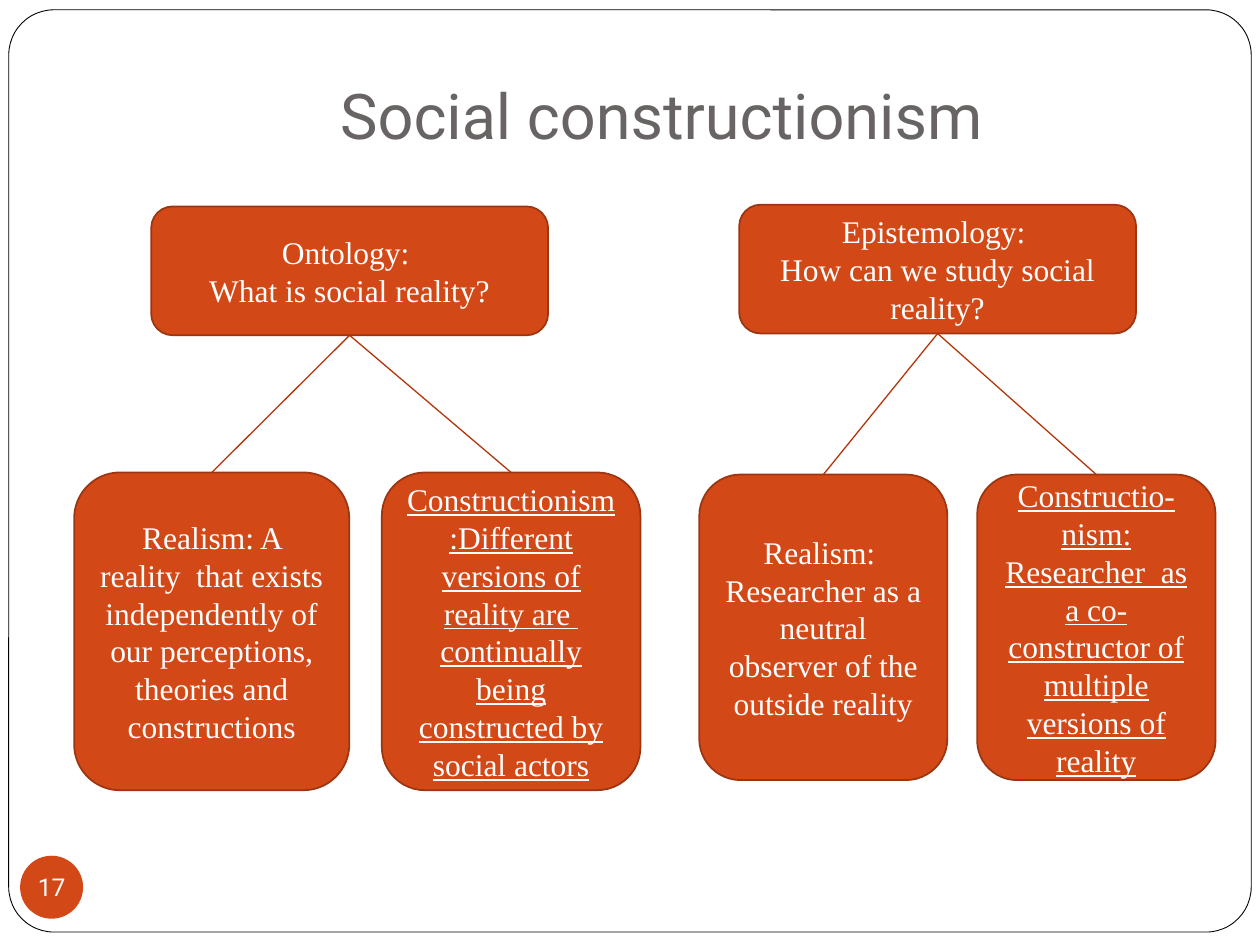
from dataclasses import dataclass

from lxml import etree
from pptx import Presentation
from pptx.dml.color import RGBColor
from pptx.enum.shapes import MSO_CONNECTOR, MSO_SHAPE
from pptx.enum.text import MSO_ANCHOR, PP_ALIGN
from pptx.oxml.ns import qn
from pptx.util import Pt

ROUNDED = MSO_SHAPE.ROUNDED_RECTANGLE
OVAL = MSO_SHAPE.OVAL
STRAIGHT = MSO_CONNECTOR.STRAIGHT
CENTER = PP_ALIGN.CENTER
MIDDLE, BOTTOM = MSO_ANCHOR.MIDDLE, MSO_ANCHOR.BOTTOM
TOP_SITE, BOTTOM_SITE = 0, 2


@dataclass(frozen=True)
class Theme:
    white: RGBColor = RGBColor.from_string("FFFFFF")
    black: RGBColor = RGBColor.from_string("000000")
    title: RGBColor = RGBColor.from_string("696464")
    accent: RGBColor = RGBColor.from_string("D34817")
    outline: RGBColor = RGBColor.from_string("9C3511")
    branch: RGBColor = RGBColor.from_string("B1360B")
    heading_font: str = "Roboto"
    body_font: str = "Times New Roman"
    title_size: int = 36
    body_size: int = 18
    number_size: int = 14


theme = Theme()


def add_box(kind, bounds, fill, line=None, line_width=1):
    shape = slide.shapes.add_shape(kind, *map(Pt, bounds))
    shape.shadow.inherit = False
    shape.fill.solid()
    shape.fill.fore_color.rgb = fill
    if line is None:
        shape.line.fill.background()
    else:
        shape.line.color.rgb = line
        shape.line.width = Pt(line_width)
    return shape


def write_text(shape, lines, font_name, size, color, anchor=MIDDLE, underline=None):
    frame = shape.text_frame
    frame.word_wrap = True
    frame.vertical_anchor = anchor
    frame.text = "\n".join(lines)
    for paragraph in frame.paragraphs:
        paragraph.alignment = CENTER
        font = paragraph.font
        font.name, font.size, font.color.rgb = font_name, Pt(size), color
        font.underline = underline


presentation = Presentation()
presentation.slide_width, presentation.slide_height = Pt(720), Pt(540)
slide = presentation.slides.add_slide(presentation.slide_layouts[6])

# Slide frame
frame_shape = add_box(ROUNDED, (5, 5.6, 710, 527), theme.white, theme.black, 0.5)
frame_shape.adjustments[0] = 0.049

# Title
title = slide.shapes.add_textbox(Pt(72), Pt(21.6), Pt(612), Pt(72.7))
write_text(title, ["Social constructionism"], theme.heading_font,
           theme.title_size, theme.title, BOTTOM)
title.text_frame.margin_bottom = Pt(7.2)

# Slide number
badge = add_box(OVAL, (11.5, 489, 36, 36), theme.accent)
write_text(badge, ["17"], theme.heading_font, theme.number_size, theme.white)
badge.text_frame.word_wrap = False
number_frame = badge.text_frame
number_frame.margin_left = number_frame.margin_right = 0
number_frame.margin_top = number_frame.margin_bottom = 0

# Each tree: question (bounds, lines), then answers (bounds, lines, underline)
trees = [
    (((86.4, 118, 226.8, 73.6), ["Ontology: ", "What is social reality?"]),
     [((42.4, 270, 157.2, 181.6),
       ["Realism: A reality  that exists independently of our perceptions, "
        "theories and constructions"], None),
      ((218.2, 270, 147.8, 181.6),
       ["Constructionism:Different versions of reality are  continually being "
        "constructed by social actors"], True)]),
    (((422.4, 117, 226.8, 73.6), ["Epistemology: ", "How can we study social reality?"]),
     [((399.6, 271.2, 141.8, 174.6),
       ["Realism: ", "Researcher as a neutral observer of the outside reality"], None),
      ((558.4, 271.2, 136.2, 174.6),
       ["Constructio-",
        "nism: Researcher  as a co-constructor of multiple versions of reality"], True)]),
]

for (question_bounds, question_lines), answers in trees:
    question = add_box(ROUNDED, question_bounds, theme.accent, theme.outline)
    write_text(question, question_lines, theme.body_font, theme.body_size, theme.white)

    for answer_bounds, answer_lines, underline in answers:
        answer = add_box(ROUNDED, answer_bounds, theme.accent, theme.outline)
        write_text(answer, answer_lines, theme.body_font, theme.body_size,
                   theme.white, underline=underline)

        # Branch from the question to the answer
        branch = slide.shapes.add_connector(STRAIGHT, 0, 0, 0, 0)
        branch.begin_connect(question, BOTTOM_SITE)
        branch.end_connect(answer, TOP_SITE)
        branch.line.color.rgb = theme.branch
        branch.line.width = Pt(0.75)
        etree.SubElement(branch._element.spPr, qn("a:effectLst"))

presentation.save("out.pptx")
